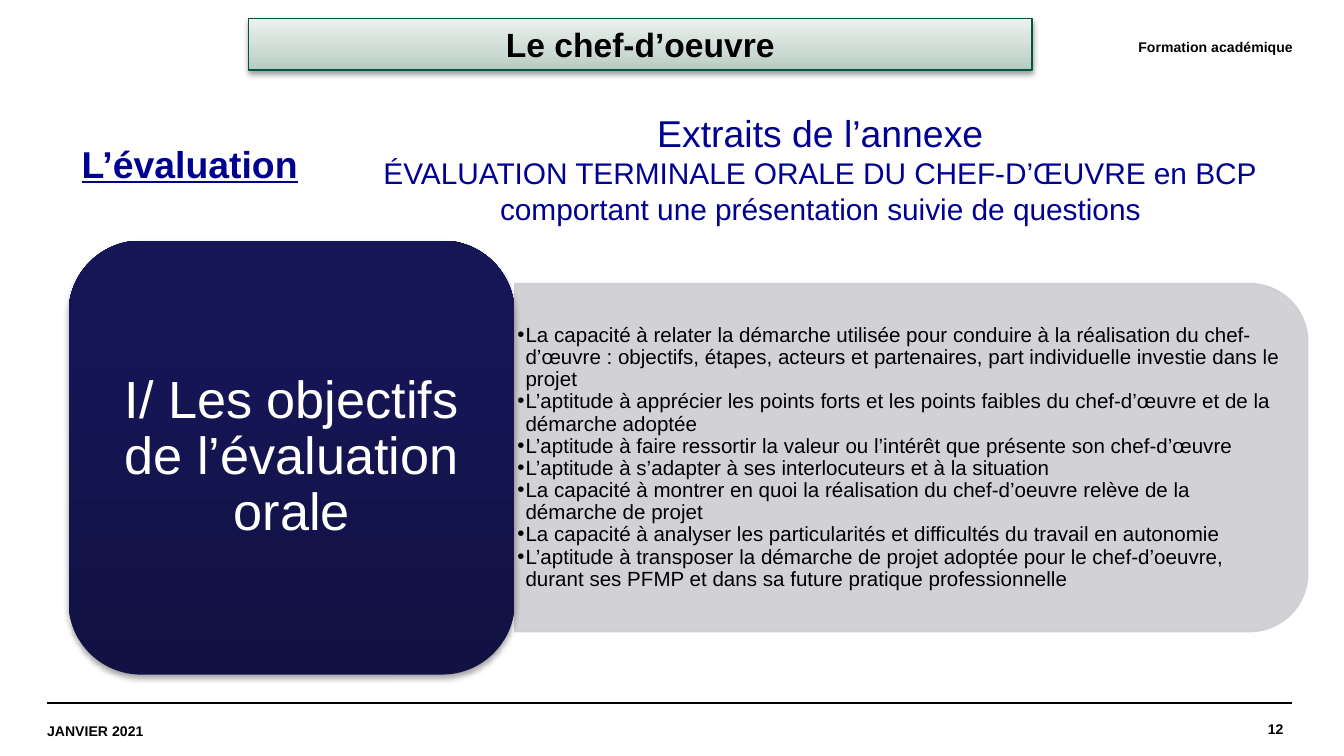
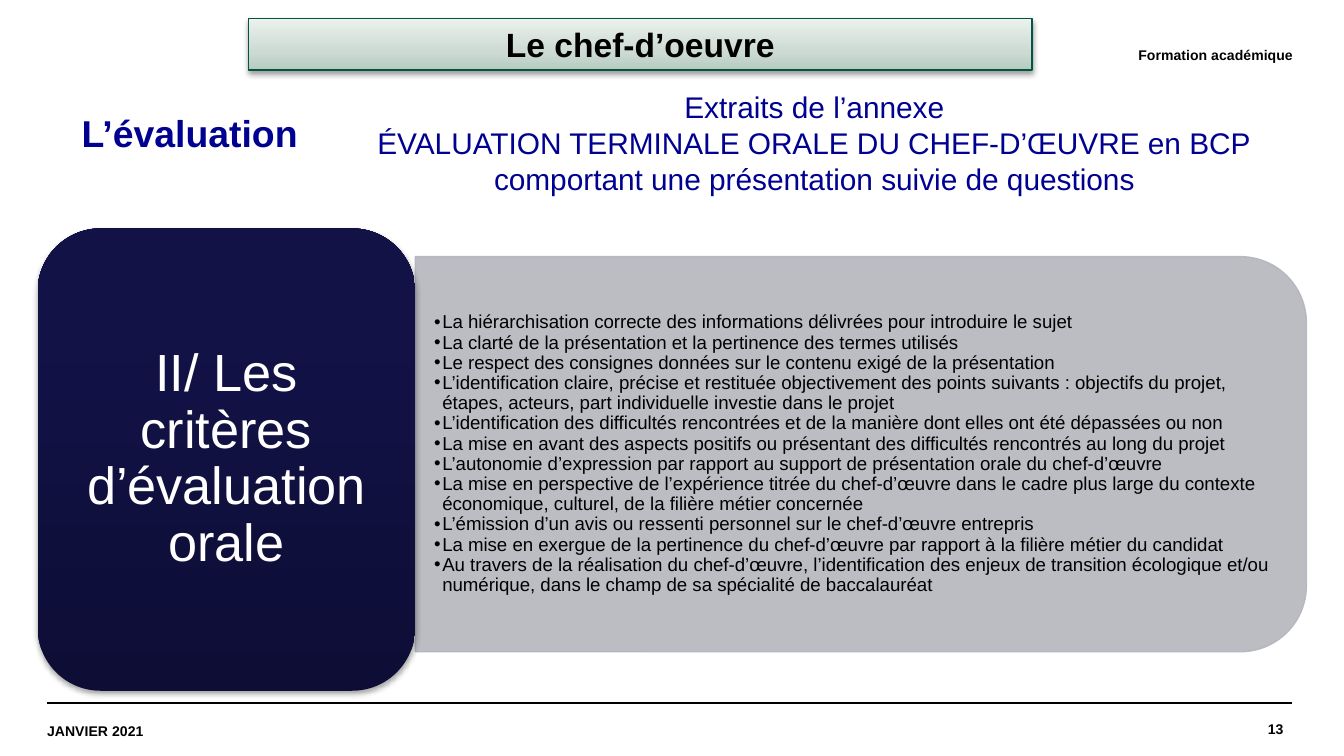
"""Build two slides on the oral assessment of the chef-d’oeuvre."""
from lxml.etree import SubElement as Sub
from pptx import Presentation
from pptx.dml.color import RGBColor as Rgb
from pptx.enum.shapes import MSO_CONNECTOR as Conn, MSO_SHAPE as Kind
from pptx.enum.text import MSO_ANCHOR as Anchor, MSO_AUTO_SIZE as Auto, PP_ALIGN as Align
from pptx.oxml.ns import qn
from pptx.util import Inches, Pt

FONT = "Arial"
BLACK = Rgb(0, 0, 0)
WHITE = Rgb(255, 255, 255)
BLUE = Rgb(0x00, 0x00, 0x91)
GREEN = Rgb(0x00, 0x56, 0x40)
MINT = [(0, Rgb(0xB6, 0xCB, 0xC0)), (35, Rgb(0xCC, 0xDA, 0xD3)), (100, Rgb(0xEC, 0xF1, 0xEE))]
NAVY = [(0, Rgb(0x11, 0x11, 0x43)), (80, Rgb(0x16, 0x16, 0x57)), (100, Rgb(0x14, 0x14, 0x58))]
NIGHT = [(0, Rgb(0x0D, 0x0D, 0x36)), (80, Rgb(0x12, 0x12, 0x47)), (100, Rgb(0x11, 0x11, 0x48))]
LIGHT = Rgb(0xCD, 0xCD, 0xD2)
GREY = Rgb(0xB5, 0xB5, 0xBD)

TITLE = "Le chef-d’oeuvre"
DATE = "JANVIER 2021"
COURSE = "Formation académique"
HEAD = "L’évaluation"
ANNEX = [
    "Extraits de l’annexe",
    "ÉVALUATION TERMINALE ORALE DU CHEF-D’ŒUVRE en BCP",
    "comportant une présentation suivie de questions",
]
PAGES = [
    dict(
        number=12, course=0.15, head=1, under=True,
        annex=(2.64, 0.77, 6.93, 1.15), sizes=[20, 16, 16],
        card=(0.51, 1.79, 3.32, 3.23), shades=NAVY,
        name="I/ Les objectifs de l’évaluation orale",
        band=(3.83, 2.11, 5.9, 2.59), tint=LIGHT, inset=(0.05, 0.02), size=11,
        points=[
            "La capacité à relater la démarche utilisée pour conduire à la réalisation du chef-d’œuvre : objectifs, étapes, acteurs et partenaires, part individuelle investie dans le projet",
            "L’aptitude à apprécier les points forts et les points faibles du chef-d’œuvre et de la démarche adoptée",
            "L’aptitude à faire ressortir la valeur ou l’intérêt que présente son chef-d’œuvre",
            "L’aptitude à s’adapter à ses interlocuteurs et à la situation",
            "La capacité à montrer en quoi la réalisation du chef-d’oeuvre relève de la démarche de projet",
            "La capacité à analyser les particularités et difficultés du travail en autonomie",
            "L’aptitude à transposer la démarche de projet adoptée pour le chef-d’oeuvre, durant ses PFMP et dans sa future pratique professionnelle",
        ],
    ),
    dict(
        number=13, course=0.21, head=0.77, under=False,
        annex=(2.24, 0.61, 7.64, 0.91), sizes=[16, 16, 16],
        card=(0.28, 1.7, 2.81, 3.44), shades=NIGHT,
        name="II/ Les critères d’évaluation orale",
        band=(3.09, 1.91, 6.63, 2.94), tint=GREY, inset=(0.27, 0.14), size=10,
        points=[
            "La hiérarchisation correcte des informations délivrées pour introduire le sujet",
            "La clarté de la présentation et la pertinence des termes utilisés",
            "Le respect des consignes données sur le contenu exigé de la présentation",
            "L’identification claire, précise et restituée objectivement des points suivants : objectifs du projet, étapes, acteurs, part individuelle investie dans le projet",
            "L’identification des difficultés rencontrées et de la manière dont elles ont été dépassées ou non",
            "La mise en avant des aspects positifs ou présentant des difficultés rencontrés au long du projet",
            "L’autonomie d’expression par rapport au support de présentation orale du chef-d’œuvre",
            "La mise en perspective de l’expérience titrée du chef-d’œuvre dans le cadre plus large du contexte économique, culturel, de la filière métier concernée",
            "L’émission d’un avis ou ressenti personnel sur le chef-d’œuvre entrepris",
            "La mise en exergue de la pertinence du chef-d’œuvre par rapport à la filière métier du candidat",
            "Au travers de la réalisation du chef-d’œuvre, l’identification des enjeux de transition écologique et/ou numérique, dans le champ de sa spécialité de baccalauréat",
        ],
    ),
]


def write(shape, lines, sizes, color=BLACK, bold=False, under=False, align=Align.LEFT,
          anchor=Anchor.TOP, inset=(0.1, 0.05), space=None, bullet=False, grow=False):
    frame = shape.text_frame
    frame.word_wrap = True
    frame.auto_size = Auto.SHAPE_TO_FIT_TEXT if grow else Auto.NONE
    frame.vertical_anchor = anchor
    frame.margin_left = frame.margin_right = Inches(inset[0])
    frame.margin_top = frame.margin_bottom = Inches(inset[1])
    for i, (line, size) in enumerate(zip(lines, sizes)):
        para = frame.paragraphs[0] if i == 0 else frame.add_paragraph()
        para.alignment = align
        if space:
            para.line_spacing = space
        if bullet:
            para.level = 1
            prop = para._p.get_or_add_pPr()
            prop.set("marL", str(Inches(0.06)))
            prop.set("indent", str(Inches(-0.06)))
            Sub(prop, qn("a:buFont"), typeface=FONT)
            Sub(prop, qn("a:buChar"), char="•")
        run = para.add_run()
        run.text = line
        font = run.font
        font.name, font.size, font.bold, font.underline = FONT, Pt(size), bold, under
        font.color.rgb = color


def label(slide, box, lines, sizes, **form):
    write(slide.shapes.add_textbox(*map(Inches, box)), lines, sizes, **form)


def small(slide, box, text, align):
    label(slide, box, [text], [7.5], bold=True, align=align, anchor=Anchor.MIDDLE, inset=(0, 0))


def plain(slide, kind, box):
    shape = slide.shapes.add_shape(kind, *map(Inches, box))
    shape.shadow.inherit = False
    return shape


def shade(shape, stops):
    shape.fill.gradient()
    shape.fill.gradient_angle = 90
    rows = shape._element.spPr.find(qn("a:gradFill")).find(qn("a:gsLst"))
    rows.clear()
    for pos, color in stops:
        stop = Sub(rows, qn("a:gs"), pos=str(pos * 1000))
        Sub(stop, qn("a:srgbClr"), val=str(color))


def drop(shape, alpha, dist):
    effect = shape._element.spPr.find(qn("a:effectLst"))
    cast = Sub(effect, qn("a:outerShdw"), blurRad=str(Pt(3.1)), dist=str(Pt(dist)),
               dir="5400000", rotWithShape="0")
    color = Sub(cast, qn("a:srgbClr"), val=str(BLACK))
    Sub(color, qn("a:alpha"), val=str(alpha * 1000))


def rule(slide, left):
    y = Inches(5.23)
    line = slide.shapes.add_connector(Conn.STRAIGHT, Inches(left), y, Inches(left + 9.22), y)
    line.line.color.rgb, line.line.width = BLACK, Pt(0.8)
    Sub(line._element.spPr, qn("a:effectLst"))


def base(slide, page):
    for left in (0.35, 0.39):
        rule(slide, left)
    small(slide, (8.07, 5.23, 1.48, 0.39), str(page["number"]), Align.RIGHT)
    small(slide, (0.35, 5.25, 1.28, 0.38), DATE, Align.LEFT)
    small(slide, (3.19, page["course"], 6.43, 0.39), COURSE, Align.RIGHT)
    title = plain(slide, Kind.RECTANGLE, (1.85, 0.14, 5.83, 0.38))
    shade(title, MINT)
    title.line.color.rgb, title.line.width = GREEN, Pt(0.75)
    drop(title, 38, 1.6)
    write(title, [TITLE], [18], bold=True, align=Align.CENTER, inset=(0.07, 0.04), grow=True)


def band(slide, page):
    x, y, wide, high = page["band"]
    turn = (wide - high) / 2
    shape = plain(slide, Kind.ROUND_2_SAME_RECTANGLE, (x + turn, y - turn, high, wide))
    shape.rotation = 90
    shape.adjustments[0], shape.adjustments[1] = 0.167, 0
    shape.fill.solid()
    shape.fill.fore_color.rgb = shape.line.color.rgb = page["tint"]
    shape.line.width = Pt(0.75)
    for color in shape._element.spPr.iter(qn("a:srgbClr")):
        Sub(color, qn("a:alpha"), val="90000")
    points = page["points"]
    write(shape, points, [page["size"]] * len(points), anchor=Anchor.MIDDLE,
          inset=page["inset"], space=0.9, bullet=True)
    shape.text_frame._txBody.bodyPr.set("vert", "vert270")


def card(slide, page):
    shape = plain(slide, Kind.ROUNDED_RECTANGLE, page["card"])
    shape.adjustments[0] = 0.167
    shade(shape, page["shades"])
    shape.line.fill.background()
    drop(shape, 35, 1.8)
    write(shape, [page["name"]], [28], color=WHITE, align=Align.CENTER,
          anchor=Anchor.MIDDLE, inset=(0.12, 0.06), space=0.9)


def main():
    deck = Presentation()
    deck.slide_width = Inches(10)
    deck.slide_height = deck.slide_width * 9 // 16
    for page in PAGES:
        slide = deck.slides.add_slide(deck.slide_layouts[6])
        base(slide, page)
        label(slide, (0.51, page["head"], 5, 0.44), [HEAD], [20], color=BLUE, bold=True,
              under=page["under"], align=Align.JUSTIFY, grow=True)
        label(slide, page["annex"], ANNEX, page["sizes"], color=BLUE,
              align=Align.CENTER, grow=True)
        band(slide, page)
        card(slide, page)
    deck.save("out.pptx")


if __name__ == "__main__":
    main()
